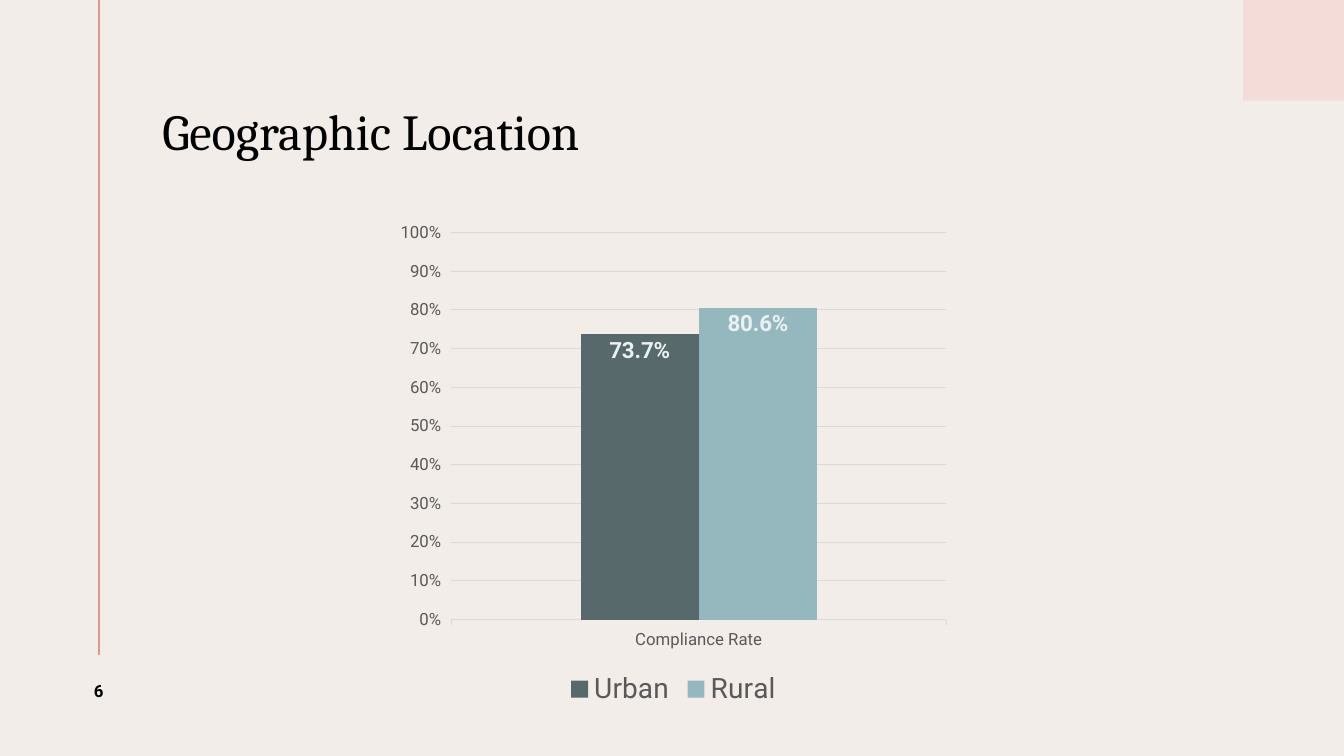
from lxml import etree
from pptx import Presentation
from pptx.chart.data import CategoryChartData
from pptx.dml.color import RGBColor
from pptx.enum.chart import XL_CHART_TYPE, XL_LABEL_POSITION, XL_LEGEND_POSITION, XL_TICK_MARK
from pptx.enum.shapes import MSO_CONNECTOR, MSO_SHAPE
from pptx.enum.text import MSO_ANCHOR, PP_ALIGN
from pptx.oxml.ns import qn
from pptx.util import Inches, Pt

CLUSTERED = XL_CHART_TYPE.COLUMN_CLUSTERED
INSIDE_END = XL_LABEL_POSITION.INSIDE_END
LEGEND_BOTTOM = XL_LEGEND_POSITION.BOTTOM
TICK_OUT = XL_TICK_MARK.OUTSIDE
STRAIGHT = MSO_CONNECTOR.STRAIGHT
RECT = MSO_SHAPE.RECTANGLE
MIDDLE = MSO_ANCHOR.MIDDLE
LEFT, CENTER = PP_ALIGN.LEFT, PP_ALIGN.CENTER

CREAM = RGBColor(0xF3, 0xED, 0xEA)
BLUSH = RGBColor(0xF4, 0xDD, 0xD8)
CORAL = RGBColor(0xDF, 0x99, 0x8B)
BLACK = RGBColor(0, 0, 0)
GREY = RGBColor(0x59, 0x59, 0x59)
GRID = RGBColor(0xD9, 0xD9, 0xD9)
SLATE = RGBColor(0x58, 0x69, 0x6B)
TEAL = RGBColor(0x95, 0xB8, 0xBF)
PALE = RGBColor(0xEA, 0xF1, 0xF2)
HEAD_FONT, BODY_FONT = "Cambria", "Roboto"

SLIDE_W, SLIDE_H = 13.33, 7.5
RULE_X, RULE_END = 0.98, 6.5
CATEGORIES = ["Compliance Rate"]
SERIES = [("Urban", [0.737], SLATE), ("Rural", [0.806], TEAL)]


def set_font(font, size, color, name=BODY_FONT, bold=False):
    font.size, font.name, font.bold = Pt(size), name, bold
    font.color.rgb = color


def set_line(line, color):
    line.color.rgb = color
    line.width = Pt(0.75)


def add_decoration(slide):
    """Corner square and vertical rule."""
    side = Inches(1)
    sp = slide.shapes.add_shape(RECT, Inches(SLIDE_W) - side, 0, side, side)
    sp.shadow.inherit = False
    sp.fill.solid()
    sp.fill.fore_color.rgb = BLUSH
    sp.line.fill.background()

    rule = slide.shapes.add_connector(STRAIGHT, Inches(RULE_X), 0, Inches(RULE_X), Inches(RULE_END))
    rule.line.color.rgb = CORAL
    rule.line.width = Pt(1.5)
    etree.SubElement(rule._element.spPr, qn("a:effectLst"))


def add_text(slide, box, text, size, font=BODY_FONT, bold=False, align=LEFT, inset=0.1):
    sp = slide.shapes.add_textbox(*map(Inches, box))
    tf = sp.text_frame
    tf.word_wrap = True
    tf.vertical_anchor = MIDDLE
    tf.margin_left = Inches(inset)
    tf.text = text
    p = tf.paragraphs[0]
    p.alignment = align
    r = p.runs[0]
    set_font(r.font, size, BLACK, font, bold)
    return p


def add_rate_chart(slide, box):
    """Clustered columns of the compliance rates."""
    data = CategoryChartData(number_format="0.0%")
    data.categories = CATEGORIES
    for name, values, _ in SERIES:
        data.add_series(name, values)
    chart = slide.shapes.add_chart(CLUSTERED, *map(Inches, box), data).chart
    chart.has_title = False
    set_font(chart.font, 10, BLACK)

    # Columns and their labels
    plot = chart.plots[0]
    plot.gap_width, plot.overlap = 219, 0
    plot.vary_by_categories = False
    for series, (_, _, color) in zip(plot.series, SERIES):
        series.format.fill.solid()
        series.format.fill.fore_color.rgb = color
        labels = series.data_labels
        labels.show_value = True
        labels.position = INSIDE_END
        labels.number_format = "0.0%"
        labels.number_format_is_linked = False
        set_font(labels.font, 16, PALE, bold=True)

    # Axes
    cat_axis, val_axis = chart.category_axis, chart.value_axis
    for axis in (cat_axis, val_axis):
        axis.major_tick_mark = TICK_OUT
        set_font(axis.tick_labels.font, 12, GREY)
    set_line(cat_axis.format.line, GRID)
    val_axis.format.line.fill.background()
    val_axis.minimum_scale, val_axis.maximum_scale, val_axis.major_unit = 0, 1, 0.1
    val_axis.tick_labels.number_format = "0%"
    val_axis.tick_labels.number_format_is_linked = False
    set_line(val_axis.major_gridlines.format.line, GRID)

    # Legend
    chart.has_legend = True
    chart.legend.position = LEGEND_BOTTOM
    chart.legend.include_in_layout = False
    set_font(chart.legend.font, 20, GREY)


def build_slide(prs):
    slide = prs.slides.add_slide(prs.slide_layouts[6])
    slide.background.fill.solid()
    slide.background.fill.fore_color.rgb = CREAM
    add_decoration(slide)
    title = add_text(slide, (1.61, 0.55, 10.73, 1.56), "Geographic Location", 36, HEAD_FONT, inset=0)
    title.line_spacing = 0.9
    number_w = 1.06
    number = add_text(slide, (RULE_X - number_w / 2, RULE_END, number_w, 0.71), "6", 12,
                      bold=True, align=CENTER)
    number.runs[0].font._element.set("spc", "150")
    add_rate_chart(slide, (3.86, 2.11, 5.64, 4.95))


def main():
    prs = Presentation()
    prs.slide_width, prs.slide_height = Inches(SLIDE_W), Inches(SLIDE_H)
    build_slide(prs)
    prs.save("out.pptx")


if __name__ == "__main__":
    main()
